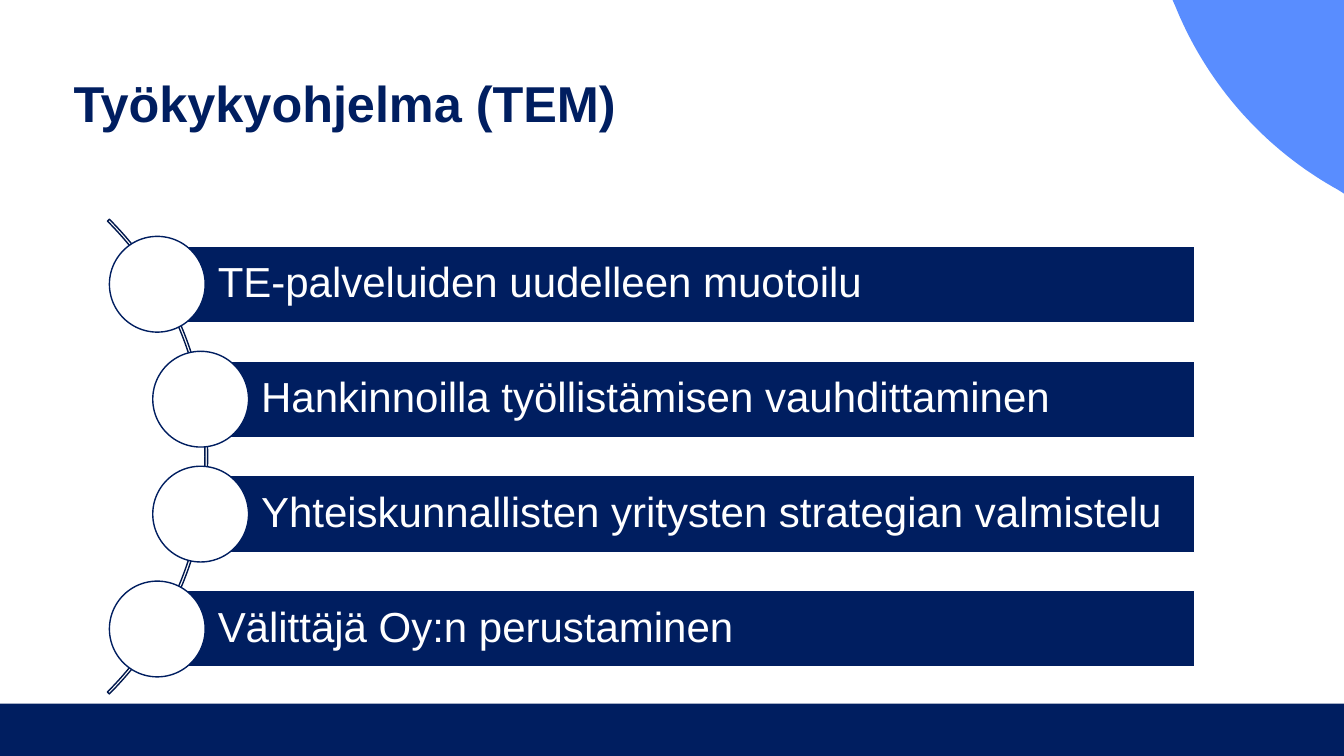
import math
from pptx import Presentation
from pptx import util as u
from pptx.dml.color import RGBColor
from pptx.enum import shapes, text

TITLE = "Työkykyohjelma (TEM)"
ITEMS = [
    ("TE-palveluiden uudelleen muotoilu", 1.56),
    ("Hankinnoilla työllistämisen vauhdittaminen", 1.99),
    ("Yhteiskunnallisten yritysten strategian valmistelu", 1.99),
    ("Välittäjä Oy:n perustaminen", 1.56),
]
COLORS = {"navy": "001E60", "arc": "00184D", "sky": "598DFF", "white": "FFFFFF"}
WIDTH, HEIGHT = 13.33, 7.5
FIRST_Y, STEP = 2.82, 1.14
BAR_RIGHT, BAR_H, CIRCLE_D = 11.85, 0.76, 0.95
CORNER_X, CORNER_Y, CORNER_R = 15.04, -1.31, 3.65
CORNER_ANGLES = range(159, 117, -1)


def rgb(name):
    return RGBColor.from_string(COLORS[name])


def style(sp, fill=None, line=None):
    sp.shadow.inherit = False
    if fill:
        sp.fill.solid()
        sp.fill.fore_color.rgb = rgb(fill)
    else:
        sp.fill.background()
    if line:
        sp.line.color.rgb = rgb(line)
        sp.line.width = u.Pt(1)
    else:
        sp.line.fill.background()


def add(kind, x, y, w, h, fill=None, line=None):
    sp = s.shapes.add_shape(kind, *map(u.Inches, (x, y, w, h)))
    style(sp, fill, line)
    return sp


def write(sp, words, size, color, bold=False):
    tf = sp.text_frame
    tf.word_wrap = True
    tf.auto_size = text.MSO_AUTO_SIZE.NONE
    tf.vertical_anchor = text.MSO_ANCHOR.MIDDLE
    p = tf.paragraphs[0]
    p.text = words
    p.alignment = text.PP_ALIGN.LEFT
    p.line_spacing = 0.9
    p.font.name = "Arial"
    p.font.size = u.Pt(size)
    p.font.bold = bold
    p.font.color.rgb = rgb(color)
    return tf


prs = Presentation()
prs.slide_width, prs.slide_height = u.Inches(WIDTH), u.Inches(HEIGHT)
s = prs.slides.add_slide(prs.slide_layouts[5])

title = s.shapes.title
title.left, title.top, title.width, title.height = map(u.Inches, (0.63, 0.34, 11.29, 1.42))
write(title, TITLE, 36, "navy", True)

add(shapes.MSO_SHAPE.RECTANGLE, 0, 6.98, WIDTH, 0.52, "navy")

curve = [(CORNER_X + CORNER_R * math.cos(math.radians(a)),
          CORNER_Y + CORNER_R * math.sin(math.radians(a))) for a in CORNER_ANGLES]
outline = [(11.63, 0), *curve[1:-1], (WIDTH, 1.92), (WIDTH, 0)]
points = [(u.Inches(x), u.Inches(y)) for x, y in outline]
fb = s.shapes.build_freeform(*points[0])
fb.add_line_segments(points[1:], close=True)
style(fb.convert_to_shape(), "sky")

arc = add(shapes.MSO_SHAPE.BLOCK_ARC, -4.6, 1.2, 6.66, 6.66, line="arc")
for i, value in enumerate((189, 27, 0.004)):
    arc.adjustments[i] = value

for i, (words, x) in enumerate(ITEMS):
    y = FIRST_Y + i * STEP
    bar = add(shapes.MSO_SHAPE.RECTANGLE, x, y - BAR_H / 2, BAR_RIGHT - x, BAR_H, "navy", "white")
    tf = write(bar, words, 30, "white")
    tf.margin_left = u.Inches(0.6)
    tf.margin_top = tf.margin_right = tf.margin_bottom = u.Inches(0.08)
    add(shapes.MSO_SHAPE.OVAL, x - CIRCLE_D / 2, y - CIRCLE_D / 2, CIRCLE_D, CIRCLE_D, "white", "navy")

prs.save("out.pptx")
